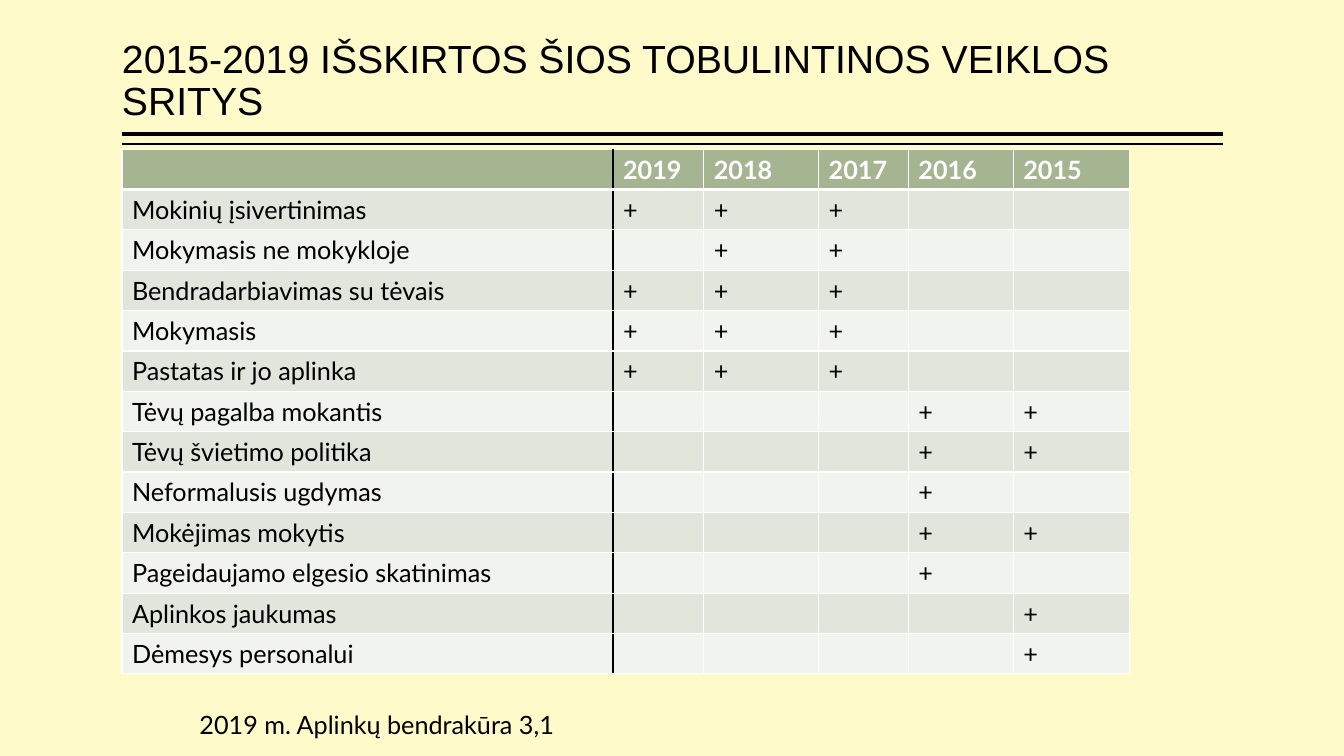
from lxml import etree
from pptx import Presentation, util as u
from pptx.dml.color import RGBColor
from pptx.enum import shapes, text
from pptx.oxml import ns

COLORS = {"page": "FEFAC9", "ink": "000000", "white": "FFFFFF",
          "head": "A5B592", "odd": "E1E5DC", "even": "F0F3EE"}
SCALE = 9144
YEARS = ["2019", "2018", "2017", "2016", "2015"]
WIDTHS = [487, 90, 114, 89, 104, 115]
AREAS = [
    ("Mokinių įsivertinimas", "+++--"),
    ("Mokymasis ne mokykloje", "-++--"),
    ("Bendradarbiavimas su tėvais", "+++--"),
    ("Mokymasis", "+++--"),
    ("Pastatas ir jo aplinka", "+++--"),
    ("Tėvų pagalba mokantis", "---++"),
    ("Tėvų švietimo politika", "---++"),
    ("Neformalusis ugdymas", "---+-"),
    ("Mokėjimas mokytis", "---++"),
    ("Pageidaujamo elgesio skatinimas", "---+-"),
    ("Aplinkos jaukumas", "----+"),
    ("Dėmesys personalui", "----+"),
]


def px(*sizes):
    return [u.Emu(size * SCALE) for size in sizes]


def rgb(name):
    return RGBColor.from_string(COLORS[name])


def apply(item, values):
    for key, value in values.items():
        setattr(item, key, value)


class Board:
    def __init__(self, slide):
        self.slide = slide
        self.body = {"name": "Lato", "size": u.Pt(18), "bold": False}
        self.title = {"name": "Arial", "size": u.Pt(28), "bold": False}
        fill = slide.background.fill
        fill.solid()
        fill.fore_color.rgb = rgb("page")

    def words(self, frame, words, style, color="ink"):
        run = frame.paragraphs[0].add_run()
        run.text = words
        apply(run.font, style)
        run.font.color.rgb = rgb(color)

    def label(self, box, words, style, frame, spacing=1.0):
        shape = self.slide.shapes.add_textbox(*px(*box))
        apply(shape.text_frame, {"word_wrap": True, **frame})
        self.words(shape.text_frame, words, style)
        shape.text_frame.paragraphs[0].line_spacing = spacing

    def rule(self, left, right, top, weight):
        line = self.slide.shapes.add_connector(
            shapes.MSO_CONNECTOR.STRAIGHT, *px(left, top, right, top))
        line.line.color.rgb = rgb("ink")
        line.line.width = u.Pt(weight)
        etree.SubElement(line._element.spPr, ns.qn("a:effectLst"))

    def edge(self, cell, side, color, weight):
        props = cell._tc.get_or_add_tcPr()
        line = etree.SubElement(props, ns.qn("a:ln" + side), w=str(u.Pt(weight)))
        fill = etree.SubElement(line, ns.qn("a:solidFill"))
        etree.SubElement(fill, ns.qn("a:srgbClr"), val=COLORS[color])

    def cell(self, cell, row, col, words):
        head = row == 0
        self.edge(cell, "L", "ink" if col == 1 else "white", 1)
        self.edge(cell, "R", "ink" if col == 0 else "white", 1)
        self.edge(cell, "T", "white", 1)
        self.edge(cell, "B", "white", 3 if head else 1)
        cell.fill.solid()
        cell.fill.fore_color.rgb = rgb("head" if head else "odd" if row % 2 else "even")
        if words:
            self.words(cell.text_frame, words, {**self.body, "bold": head},
                       "white" if head else "ink")

    def table(self, left, top, widths, height, rows):
        box = px(left, top, sum(widths), height * len(rows))
        table = self.slide.shapes.add_table(len(rows), len(widths), *box).table
        for column, width in zip(table.columns, px(*widths)):
            column.width = width
        for r, row in enumerate(rows):
            table.rows[r].height = px(height)[0]
            for c, words in enumerate(row):
                self.cell(table.cell(r, c), r, c, words)


def main():
    deck = Presentation()
    deck.slide_width, deck.slide_height = px(1333, 750)
    board = Board(deck.slides.add_slide(deck.slide_layouts[6]))
    board.rule(121, 1213, 133, 3)
    board.rule(121, 1213, 143, 1)
    board.label((121, 8, 1092, 120), "2015-2019 IŠSKIRTOS ŠIOS TOBULINTINOS VEIKLOS SRITYS",
                board.title, {"margin_left": 0, "margin_right": 0,
                              "vertical_anchor": text.MSO_ANCHOR.BOTTOM}, 0.9)
    rows = [["", *YEARS]]
    rows += [[area, *(mark.strip("-") for mark in marks)] for area, marks in AREAS]
    board.table(121, 148, WIDTHS, 40, rows)
    board.label((188, 699, 528, 40), "2019 m. Aplinkų bendrakūra 3,1", board.body,
                {"auto_size": text.MSO_AUTO_SIZE.SHAPE_TO_FIT_TEXT})
    deck.save("out.pptx")


if __name__ == "__main__":
    main()
